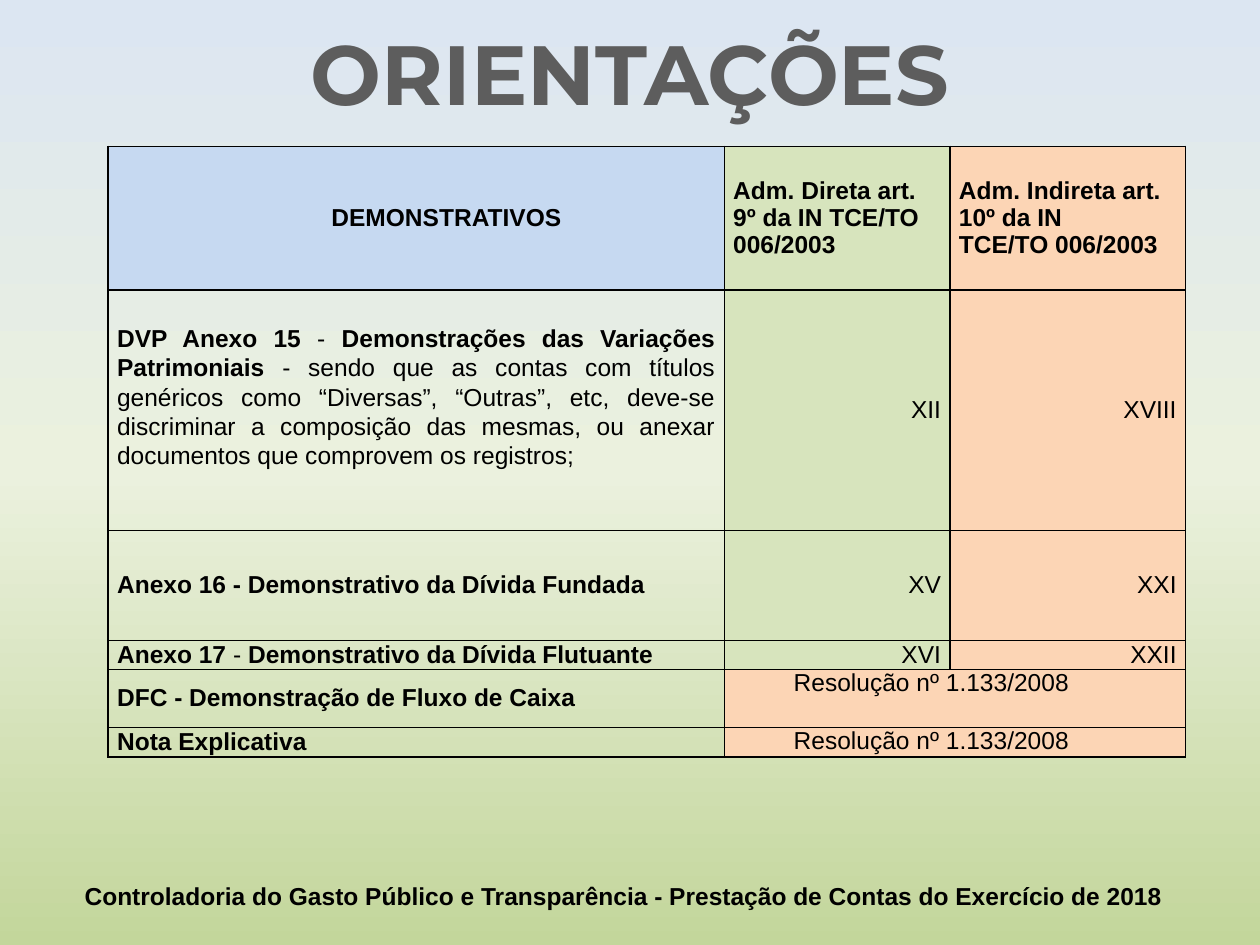
from lxml import etree
from pptx import Presentation
from pptx.dml.color import RGBColor
from pptx.enum import text
from pptx.oxml import ns, parse_xml
from pptx.util import Cm, Pt

COLORS = {
    "title": "5D5D5D", "text": "000000", "border": "000000",
    "blue": "C6D9F1", "green": "D7E4BD", "orange": "FCD5B5",
}
BACKGROUND_STOPS = [(0, "DCE6F2"), (50, "EBF1DE"), (100, "C3D69B")]
TITLE = "ORIENTAÇÕES"
FOOTER = "Controladoria do Gasto Público e Transparência - Prestação de Contas do Exercício de 2018"
HEADERS = [
    ["DEMONSTRATIVOS"],
    ["Adm. Direta art. 9º da IN TCE/TO 006/2003"],
    ["Adm. Indireta art. 10º da IN", "TCE/TO 006/2003"],
]
ROWS = [
    ([("DVP Anexo 15", True), (" - ", False),
      ("Demonstrações das Variações Patrimoniais", True),
      (" - sendo que as contas com títulos genéricos como “Diversas”, “Outras”, etc, "
       "deve-se discriminar a composição das mesmas, ou anexar documentos que "
       "comprovem os registros;", False)], "XII", "XVIII"),
    ([("Anexo 16 - Demonstrativo da Dívida Fundada", True)], "XV", "XXI"),
    ([("Anexo 17", True), (" - ", False),
      ("Demonstrativo da Dívida Flutuante", True)], "XVI", "XXII"),
    ([("DFC - Demonstração de Fluxo de Caixa", True)], "Resolução nº 1.133/2008"),
    ([("Nota Explicativa", True)], "Resolução nº 1.133/2008"),
]
COLUMN_WIDTHS = [12.42, 4.55, 4.75]
ROW_HEIGHTS = [2.9, 4.85, 2.21, 0.59, 1.17, 0.59]
FIRST_LINE_INDENT = Cm(1.22)
ALIGN = text.PP_ALIGN
ANCHOR = text.MSO_ANCHOR


def rgb(name):
    return RGBColor.from_string(COLORS[name])


def add_run(paragraph, words, bold, size=14, font="Arial", color="text"):
    run = paragraph.add_run()
    run.text = words
    run.font.size, run.font.name, run.font.bold = Pt(size), font, bold
    run.font.color.rgb = rgb(color)


def set_background(slide):
    stops = "".join(
        f'<a:gs pos="{position * 1000}"><a:srgbClr val="{color}"/></a:gs>'
        for position, color in BACKGROUND_STOPS)
    background = parse_xml(
        f'<p:bg {ns.nsdecls("p", "a")}><p:bgPr><a:gradFill rotWithShape="1">'
        f'<a:gsLst>{stops}</a:gsLst><a:lin ang="5400000" scaled="0"/></a:gradFill>'
        '<a:effectLst/></p:bgPr></p:bg>')
    slide.element.cSld.insert(0, background)


def format_cell(cell, fill=None, anchor=ANCHOR.MIDDLE):
    cell.margin_left = cell.margin_right = Cm(0.18)
    cell.margin_top = cell.margin_bottom = 0
    cell.vertical_anchor = anchor
    properties = cell._tc.get_or_add_tcPr()
    for index, side in enumerate("LRTB"):
        line = etree.Element(ns.qn(f"a:ln{side}"), w=str(Pt(1)))
        solid = etree.SubElement(line, ns.qn("a:solidFill"))
        etree.SubElement(solid, ns.qn("a:srgbClr"), val=COLORS["border"])
        properties.insert(index, line)
    if fill:
        cell.fill.solid()
        cell.fill.fore_color.rgb = rgb(fill)
    else:
        cell.fill.background()


def write_cell(cell, paragraphs, align, spacing=0.98, indent=False):
    for index, runs in enumerate(paragraphs):
        frame = cell.text_frame
        paragraph = frame.add_paragraph() if index else frame.paragraphs[0]
        paragraph.alignment = align
        paragraph.line_spacing = spacing
        if indent:
            properties = paragraph._p.get_or_add_pPr()
            properties.set("marL", "0")
            properties.set("indent", str(FIRST_LINE_INDENT))
        for words, bold in runs:
            add_run(paragraph, words, bold)


def add_statements_table(slide):
    table = slide.shapes.add_table(
        len(ROW_HEIGHTS), len(COLUMN_WIDTHS), Cm(2.18), Cm(2.95),
        Cm(sum(COLUMN_WIDTHS)), Cm(sum(ROW_HEIGHTS))).table
    table.first_row = table.horz_banding = False
    for column, width in zip(table.columns, COLUMN_WIDTHS):
        column.width = Cm(width)
    for row, height in zip(table.rows, ROW_HEIGHTS):
        row.height = Cm(height)

    for index, (lines, fill) in enumerate(zip(HEADERS, ("blue", "green", "orange"))):
        cell = table.cell(0, index)
        format_cell(cell, fill)
        write_cell(cell, [[(line, True)] for line in lines],
                   ALIGN.LEFT if index else ALIGN.CENTER, indent=index == 0)

    for number, (statement, *references) in enumerate(ROWS, 1):
        cell = table.cell(number, 0)
        format_cell(cell)
        write_cell(cell, [statement], ALIGN.JUSTIFY, 1.07 if len(statement) > 3 else 0.98)
        merged = len(references) == 1
        if merged:
            table.cell(number, 1).merge(table.cell(number, 2))
        for index in (1, 2):
            fill = "orange" if merged or index == 2 else "green"
            format_cell(table.cell(number, index), fill,
                        ANCHOR.TOP if merged else ANCHOR.MIDDLE)
        for index, reference in enumerate(references, 1):
            write_cell(table.cell(number, index), [[(reference, False)]],
                       ALIGN.LEFT if merged else ALIGN.RIGHT, indent=True)
    table.cell(1, 0).margin_bottom = Cm(0.56)


def main():
    presentation = Presentation()
    presentation.slide_width, presentation.slide_height = Cm(25.4), Cm(19.05)
    slide = presentation.slides.add_slide(presentation.slide_layouts[5])
    set_background(slide)

    footer = slide.shapes.add_textbox(Cm(1.4), Cm(17.63), Cm(22.3), Cm(0.86))
    footer.text_frame.word_wrap = True
    paragraph = footer.text_frame.paragraphs[0]
    paragraph.alignment = ALIGN.RIGHT
    add_run(paragraph, FOOTER, True)

    add_statements_table(slide)

    title = slide.shapes.title
    title.left, title.top, title.width, title.height = Cm(0.15), Cm(0.3), Cm(25.1), Cm(2.31)
    title.text_frame.vertical_anchor = ANCHOR.MIDDLE
    paragraph = title.text_frame.paragraphs[0]
    paragraph.alignment = ALIGN.CENTER
    add_run(paragraph, TITLE, True, 48, "Montserrat", "title")

    presentation.save("out.pptx")


if __name__ == "__main__":
    main()
